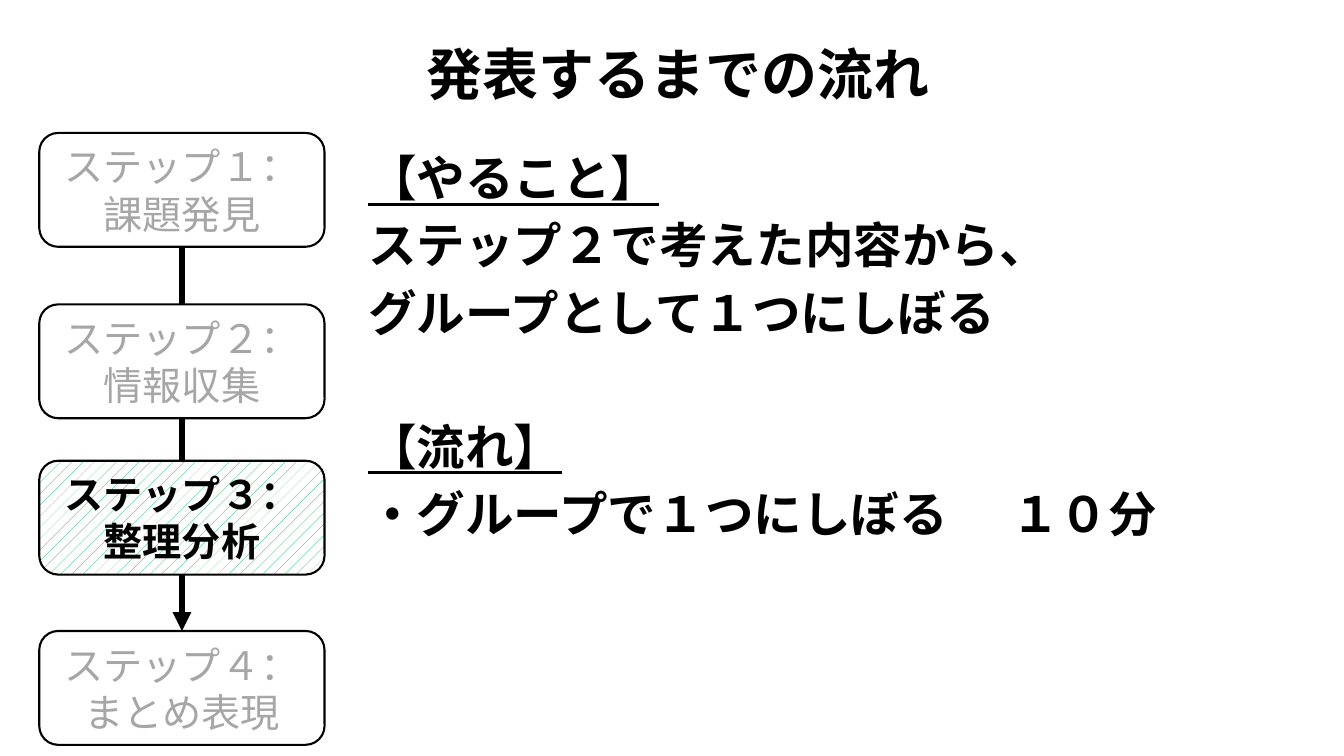
from pptx import Presentation
from pptx.dml.color import RGBColor
from pptx.enum.dml import MSO_PATTERN
from pptx.enum.shapes import MSO_CONNECTOR, MSO_SHAPE
from pptx.enum.text import MSO_ANCHOR, PP_ALIGN
from pptx.oxml.ns import qn
from pptx.util import Cm, Pt
from lxml import etree

LINE = MSO_CONNECTOR.STRAIGHT
ROUND = MSO_SHAPE.ROUNDED_RECTANGLE
DOTS = MSO_PATTERN.PERCENT_10
MID = MSO_ANCHOR.MIDDLE
CENTER = PP_ALIGN.CENTER

HEX = {"ink": "000000", "dim": "A6A6A6", "paper": "FFFFFF", "green": "00B050"}
FONT = "Arial"
STEP_FONT = "Noto Sans CJK JP"
STEPS = [  # top in cm, text
    (3.35, "ステップ１：\n課題発見"),
    (7.67, "ステップ２：\n情報収集"),
    (11.61, "ステップ３：\n整理分析"),
    (15.9, "ステップ４：\nまとめ表現"),
]
NOW = 2  # index of the current step
TASKS = [
    "【やること】",
    "ステップ２で考えた内容から、",
    "グループとして１つにしぼる",
    "【流れ】",
    "・グループで１つにしぼる\t１０分",
]


def color(name):
    return RGBColor.from_string(HEX[name])


def style(para, face, size, ink="ink", bold=True, line=False):
    for run in para.runs:
        font = run.font
        font.name, font.size = face, Pt(size)
        font.bold, font.underline = bold, line
        font.color.rgb = color(ink)


def add_box(slide, left, top, width, height):
    frame = slide.shapes.add_textbox(Cm(left), Cm(top), Cm(width), Cm(height)).text_frame
    frame.word_wrap = True
    frame.margin_left = frame.margin_right = Cm(0.34)
    frame.margin_top = frame.margin_bottom = Cm(0.17)
    return frame


def add_title(slide, left, top, width, height):
    frame = add_box(slide, left, top, width, height)
    frame.text = "発表するまでの流れ"
    para = frame.paragraphs[0]
    para.alignment, para.line_spacing = CENTER, 1.5
    style(para, FONT, 40)


def add_tasks(slide, left, top, width, height):
    frame = add_box(slide, left, top, width, height)
    frame.text = "\n".join(TASKS)
    for i, para in enumerate(frame.paragraphs):
        head = TASKS[i].startswith("【")
        para.line_spacing = 1.15
        if head and i:
            para.space_before = Pt(48)
        if "\t" in TASKS[i]:
            tabs = etree.SubElement(para._p.get_or_add_pPr(), qn("a:tabLst"))
            etree.SubElement(tabs, qn("a:tab"), pos=str(Cm(16.2)), algn="l")
        style(para, FONT, 34.7, line=head)


def add_step(slide, left, top, width, height, text, now):
    box = slide.shapes.add_shape(ROUND, Cm(left), Cm(top), Cm(width), Cm(height))
    box.shadow.inherit = False
    if now:
        box.fill.patterned()
        box.fill.pattern = DOTS
        box.fill.fore_color.rgb = color("green")
        box.fill.back_color.rgb = color("paper")
    else:
        box.fill.solid()
        box.fill.fore_color.rgb = color("paper")
    box.line.color.rgb = color("ink")
    box.line.width = Pt(1.5)
    frame = box.text_frame
    frame.text = text
    frame.vertical_anchor = MID
    for para in frame.paragraphs:
        para.alignment = CENTER
        style(para, STEP_FONT, 28, "ink" if now else "dim", now)
    return box


def add_flow(slide, left, width, height):
    # Arrow first, so that it runs behind the steps
    link = slide.shapes.add_connector(LINE, 0, 0, 0, 0)
    link.line.color.rgb = color("ink")
    link.line.width = Pt(4.5)
    etree.SubElement(link.line._get_or_add_ln(), qn("a:tailEnd"), type="triangle")
    etree.SubElement(link._element.spPr, qn("a:effectLst"))
    boxes = [add_step(slide, left, top, width, height, text, i == NOW)
             for i, (top, text) in enumerate(STEPS)]
    link.begin_connect(boxes[0], 2)
    link.end_connect(boxes[-1], 0)


def main():
    deck = Presentation()
    deck.slide_width, deck.slide_height = Cm(33.87), Cm(19.05)
    slide = deck.slides.add_slide(deck.slide_layouts[6])
    add_title(slide, 1.63, -0.03, 30.91, 2.9)
    add_tasks(slide, 8.94, 3.35, 24.92, 10.57)
    add_flow(slide, 0.99, 7.19, 2.87)
    deck.save("out.pptx")


if __name__ == "__main__":
    main()
